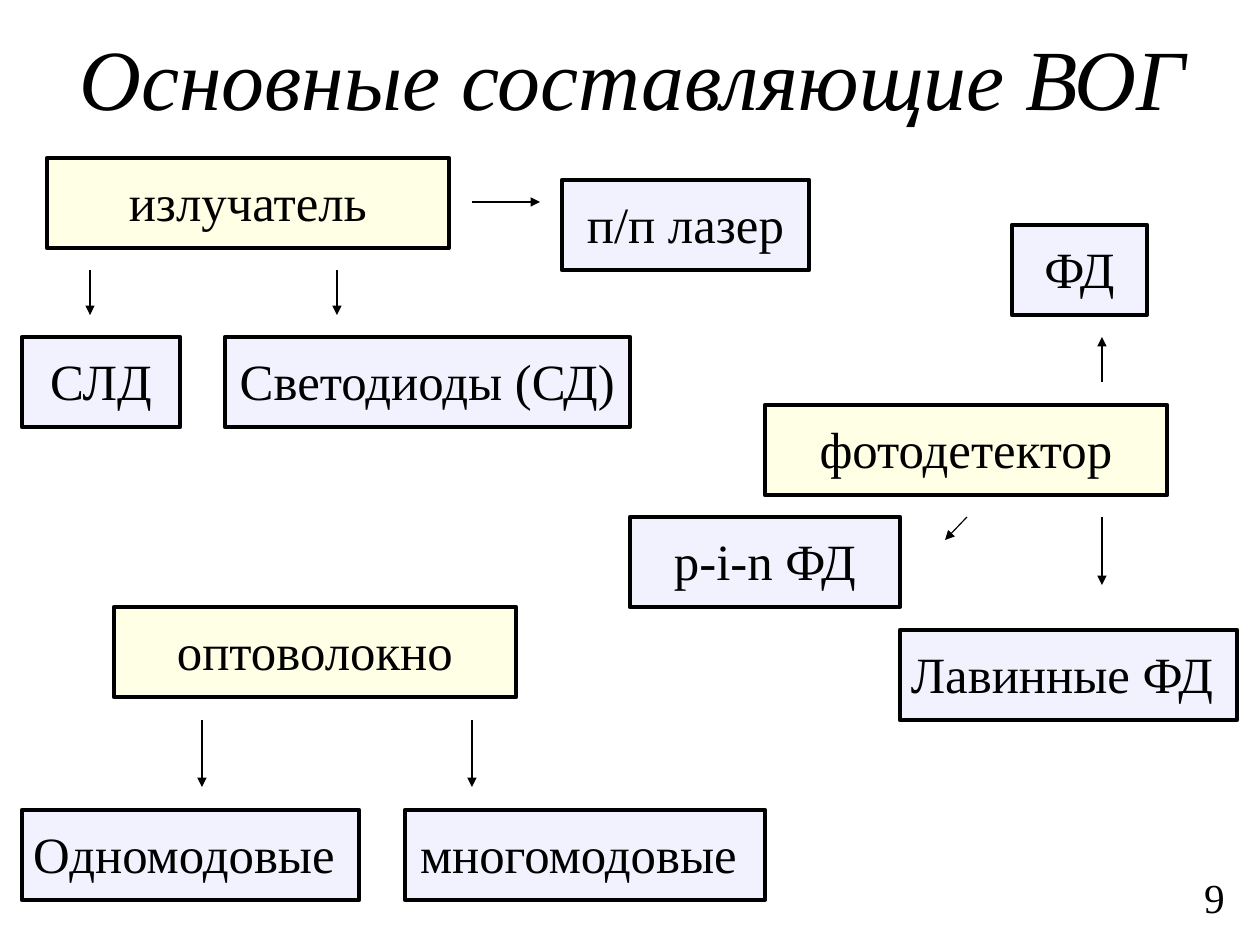
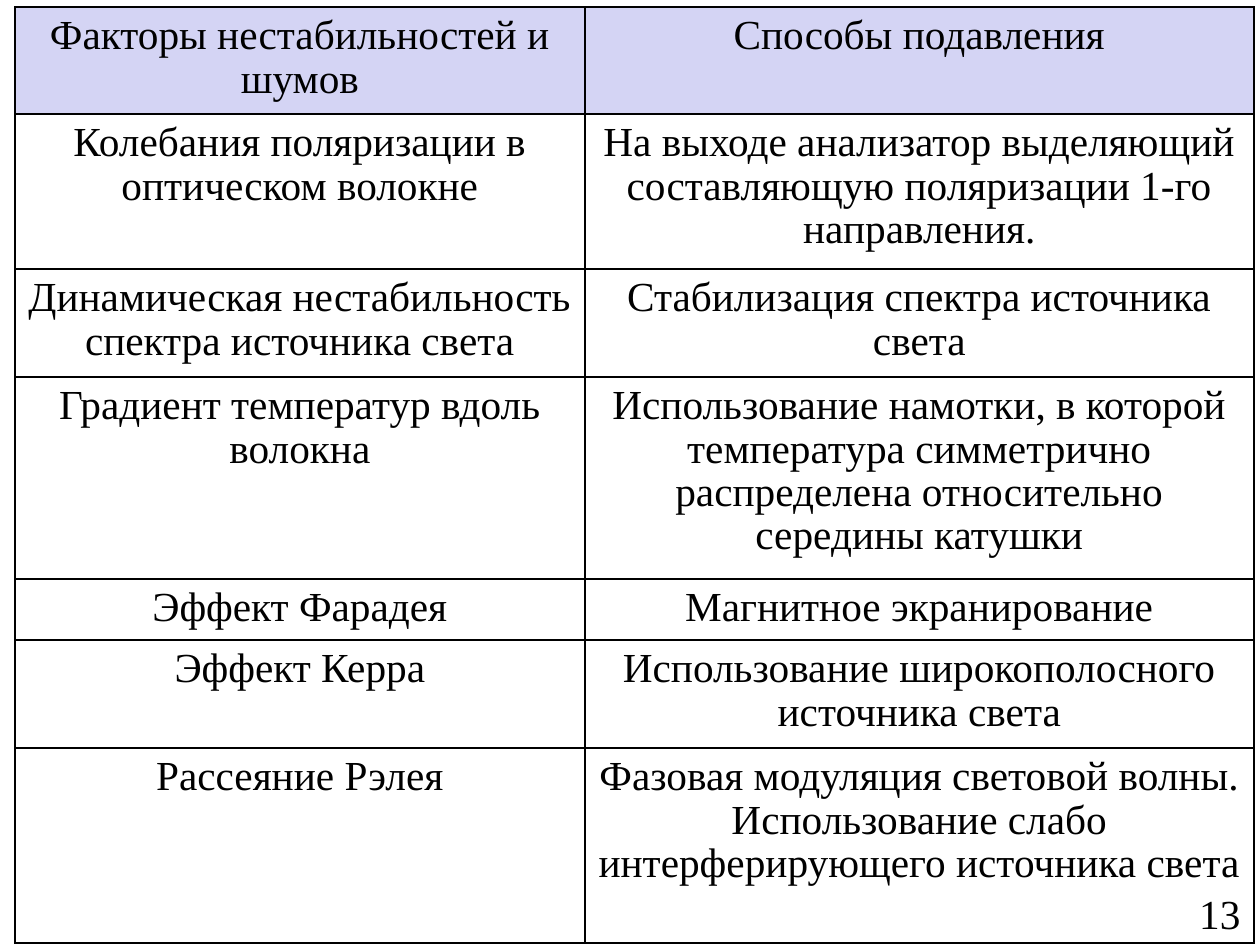
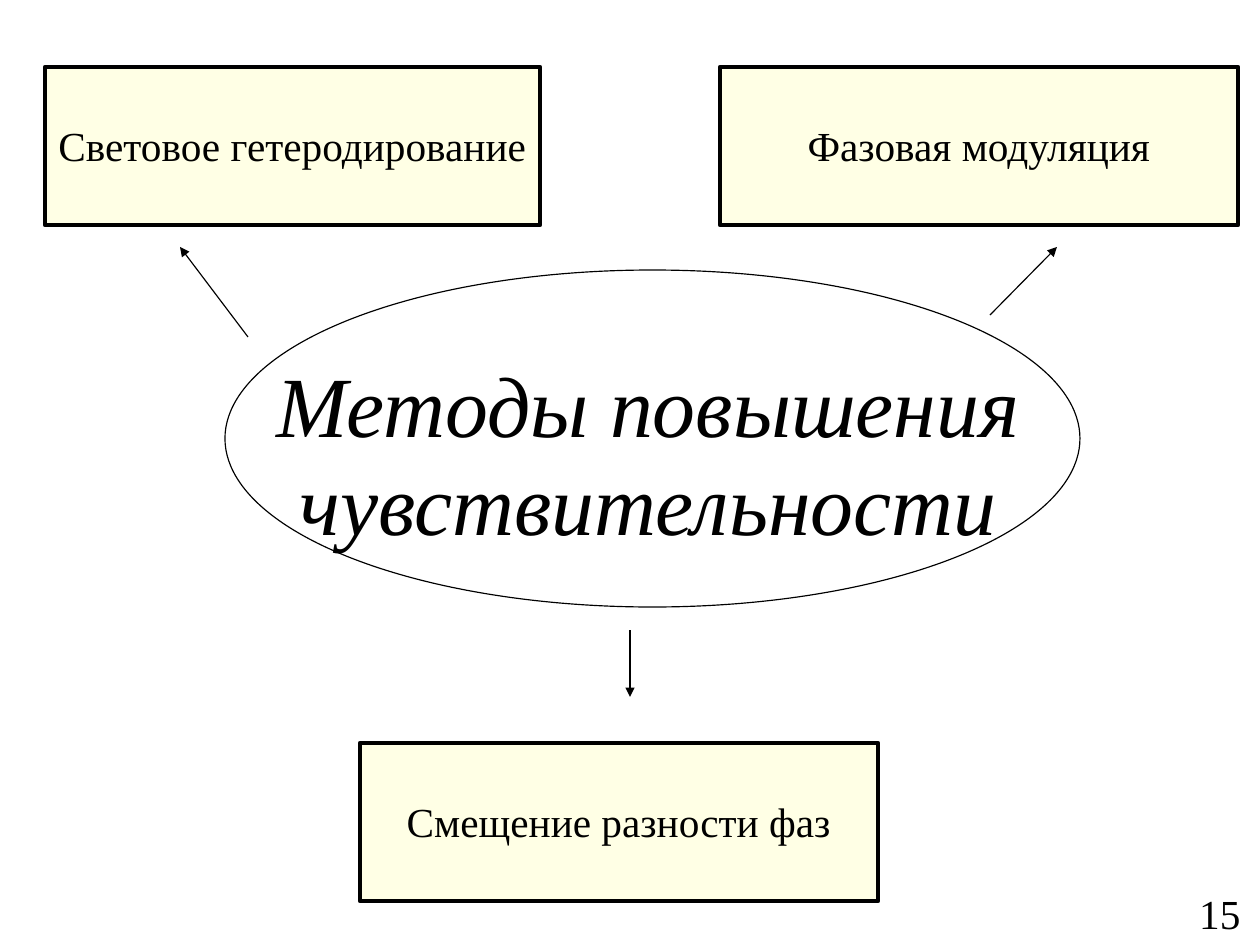
from lxml.etree import SubElement
from pptx import Presentation
from pptx.dml.color import RGBColor
from pptx.enum.dml import MSO_LINE
from pptx.enum.shapes import MSO_CONNECTOR, MSO_SHAPE
from pptx.enum.text import MSO_ANCHOR, MSO_AUTO_SIZE, PP_ALIGN
from pptx.oxml.ns import qn
from pptx.util import Pt

PX = 8000
FONT = "Times New Roman"
BLACK = RGBColor(0x00, 0x00, 0x00)
CREAM = RGBColor(0xFF, 0xFF, 0xCC)
LILAC = RGBColor(0xE6, 0xE6, 0xFF)
HEAD = RGBColor(0xD2, 0xD2, 0xF4)
THIN, THICK = 0.75, 2.83


def px(*nums):
    return [num * PX for num in nums]


def write(frame, text, size=26, italic=False, align=PP_ALIGN.CENTER, space=0.95):
    para = frame.paragraphs[0]
    para.alignment = align
    para.line_spacing = space
    run = para.add_run()
    run.text = text
    font = run.font
    font.name, font.size, font.italic = FONT, Pt(size), italic
    font.color.rgb = BLACK


def pad(owner, left, top, right, base):
    owner.margin_left, owner.margin_top = px(left, top)
    owner.margin_right, owner.margin_bottom = px(right, base)


def tint(fill, color, alpha):
    fill.solid()
    fill.fore_color.rgb = color
    node = fill._xPr.find(qn("a:solidFill"))[0]
    SubElement(node, qn("a:alpha"), val=str(alpha * 1000))


def stroke(line, width):
    line.color.rgb = BLACK
    line.width = Pt(width)
    line.dash_style = MSO_LINE.SOLID


def title(slide, text, spot):
    frame = slide.shapes.add_textbox(*px(*spot)).text_frame
    frame.word_wrap = True
    frame.vertical_anchor = MSO_ANCHOR.MIDDLE
    pad(frame, 0, 5, 0, 0)
    write(frame, text, size=54, italic=True)


def number(slide, text, spot):
    frame = slide.shapes.add_textbox(*px(*spot)).text_frame
    frame.word_wrap = False
    frame.auto_size = MSO_AUTO_SIZE.SHAPE_TO_FIT_TEXT
    write(frame, text, align=PP_ALIGN.LEFT, space=0.93)


def box(slide, text, spot, color, size):
    shape = slide.shapes.add_shape(MSO_SHAPE.RECTANGLE, *px(*spot))
    shape.shadow.inherit = False
    tint(shape.fill, color, 50)
    stroke(shape.line, THICK)
    frame = shape.text_frame
    frame.word_wrap = False
    frame.vertical_anchor = MSO_ANCHOR.MIDDLE
    pad(frame, 14, 10, 14, 8)
    write(frame, text, size=size)


def oval(slide, spot):
    shape = slide.shapes.add_shape(MSO_SHAPE.OVAL, *px(*spot))
    shape.shadow.inherit = False
    shape.fill.background()
    stroke(shape.line, THIN)


def arrow(slide, ends):
    line = slide.shapes.add_connector(MSO_CONNECTOR.STRAIGHT, *px(*ends))
    stroke(line.line, THIN)
    SubElement(line.line._get_or_add_ln(), qn("a:tailEnd"), type="triangle")
    SubElement(line._element.spPr, qn("a:effectLst"))


def edge(cell):
    props = cell._tc.get_or_add_tcPr()
    for spot, side in enumerate(("lnL", "lnR", "lnT", "lnB")):
        line = props.makeelement(qn("a:" + side), {"w": str(Pt(1))})
        fill = SubElement(line, qn("a:solidFill"))
        SubElement(fill, qn("a:srgbClr"), val=str(BLACK))
        props.insert(spot, line)


def grid(slide, left, top, wides, highs, rows):
    spot = px(left, top, sum(wides), sum(highs))
    table = slide.shapes.add_table(len(rows), len(wides), *spot).table
    table.first_row = table.horz_banding = False
    for col, wide in zip(table.columns, wides):
        col.width = wide * PX
    for row, high, texts in zip(table.rows, highs, rows):
        row.height = high * PX
        for cell, text in zip(row.cells, texts):
            pad(cell, 11, 8, 11, 6)
            write(cell.text_frame, text)
            if texts is rows[0]:
                tint(cell.fill, HEAD, 94)
            else:
                cell.fill.background()
            edge(cell)


def parts(slide):
    title(slide, "Основные составляющие ВОГ", (45, 22, 1175, 113))
    for text, left, top in (
        ("излучатель", 47, 158),
        ("фотодетектор", 765, 405),
        ("оптоволокно", 114, 607),
    ):
        box(slide, text, (left, top, 402, 90), CREAM, 32)
    for text, left, top, wide in (
        ("п/п лазер", 562, 180, 247),
        ("Светодиоды (СД)", 225, 337, 405),
        ("СЛД", 22, 337, 158),
        ("ФД", 1012, 225, 135),
        ("Лавинные ФД ", 900, 630, 337),
        ("p-i-n ФД", 630, 517, 270),
        ("Одномодовые ", 22, 810, 337),
        ("многомодовые ", 405, 810, 360),
    ):
        box(slide, text, (left, top, wide, 90), LILAC, 32)
    for ends in (
        (472, 202, 540, 202),
        (337, 270, 337, 315),
        (90, 270, 90, 315),
        (1102, 517, 1102, 585),
        (967, 517, 945, 540),
        (1102, 382, 1102, 337),
        (202, 720, 202, 787),
        (472, 720, 472, 787),
    ):
        arrow(slide, ends)
    number(slide, "9", (1193, 871, 43, 58))


def noise(slide):
    rows = (
        ("Факторы нестабильностей и шумов", "Способы подавления"),
        ("Колебания поляризации в оптическом волокне",
         "На выходе анализатор выделяющий составляющую поляризации 1-го направления."),
        ("Динамическая нестабильность спектра источника света",
         "Стабилизация спектра источника света"),
        ("Градиент температур вдоль волокна",
         "Использование намотки, в которой температура симметрично "
         "распределена относительно середины катушки"),
        ("Эффект Фарадея", "Магнитное экранирование"),
        ("Эффект Керра", "Использование широкополосного источника света"),
        ("Рассеяние Рэлея",
         "Фазовая модуляция световой волны. Использование слабо "
         "интерферирующего источника света"),
    )
    grid(slide, 15, 7, (570, 669), (107, 155, 108, 202, 61, 108, 195), rows)
    number(slide, "13", (1188, 887, 65, 58))


def ways(slide):
    title(slide, "Методы повышения чувствительности", (81, 360, 1134, 190))
    for text, left, top, wide in (
        ("Смещение разности фаз", 360, 743, 518),
        ("Фазовая модуляция", 720, 67, 518),
        ("Световое гетеродирование", 45, 67, 495),
    ):
        box(slide, text, (left, top, wide, 158), CREAM, 26)
    oval(slide, (225, 270, 855, 337))
    for ends in (
        (630, 630, 630, 697),
        (990, 315, 1057, 247),
        (248, 337, 180, 247),
    ):
        arrow(slide, ends)
    number(slide, "15", (1188, 887, 65, 58))


def main():
    deck = Presentation()
    deck.slide_width, deck.slide_height = px(1260, 945)
    for build in (parts, noise, ways):
        build(deck.slides.add_slide(deck.slide_layouts[6]))
    deck.save("out.pptx")


if __name__ == "__main__":
    main()
